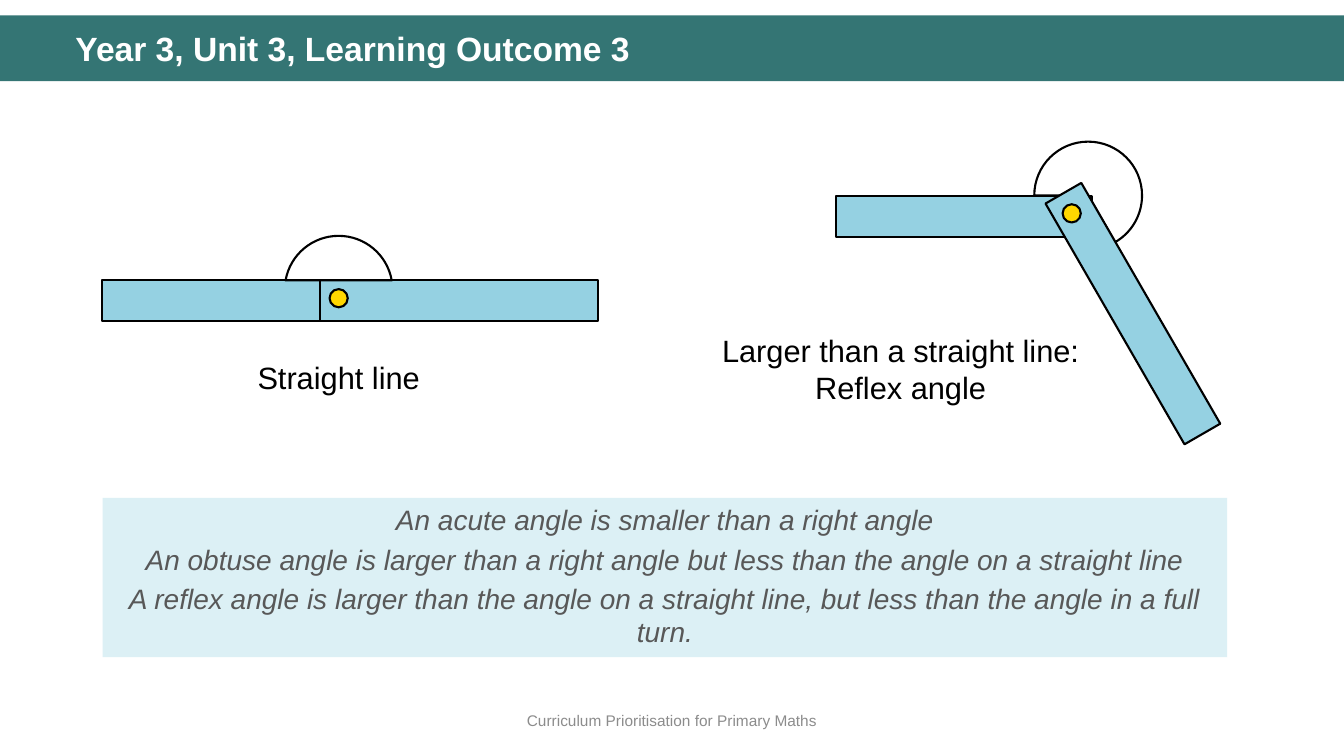
"""Build a slide comparing a straight line with a reflex angle."""
import math
from itertools import pairwise

from lxml import etree
from pptx import Presentation
from pptx import util as u
from pptx.dml.color import RGBColor
from pptx.enum import shapes, text
from pptx.oxml import ns

Pt = u.Pt
TEAL = RGBColor(0x34, 0x75, 0x74)
STRIP_BLUE = RGBColor(0x95, 0xD1, 0xE2)
PALE_BLUE = RGBColor(0xDC, 0xF0, 0xF5)
GOLD = RGBColor(0xFF, 0xD7, 0x00)
BLACK = RGBColor(0, 0, 0)
WHITE = RGBColor(0xFF, 0xFF, 0xFF)
DARK_GREY = RGBColor(0x58, 0x58, 0x58)
FOOTER_GREY = RGBColor(0x8C, 0x8C, 0x8C)

STRIP_WIDTH = 29.5
SHORT_STRIP = 182.6
LONG_STRIP = 198.6
PIN_SIZE = 13
ARC_RADIUS = 38.5


def style(shape, fill=None, outlined=True):
    """Set the fill and outline of a shape and remove its shadow."""
    shape.shadow.inherit = False
    if fill is None:
        shape.fill.background()
    else:
        shape.fill.solid()
        shape.fill.fore_color.rgb = fill
    if outlined:
        shape.line.color.rgb = BLACK
        shape.line.width = Pt(1.5)
    else:
        shape.line.fill.background()


def add_panel(slide, left, top, width, height, fill):
    """Add a filled rectangle without an outline."""
    panel = slide.shapes.add_shape(
        shapes.MSO_SHAPE.RECTANGLE, Pt(left), Pt(top), Pt(width), Pt(height))
    style(panel, fill, outlined=False)
    return panel


def write(shape, lines, size, color, bold=False, italic=False, gap=0,
          spacing=1.0, align=text.PP_ALIGN.CENTER, anchor=text.MSO_ANCHOR.TOP):
    """Write one paragraph per line into a shape."""
    frame = shape.text_frame
    frame.word_wrap = True
    frame.vertical_anchor = anchor
    for index, line in enumerate(lines):
        paragraph = frame.add_paragraph() if index else frame.paragraphs[0]
        paragraph.alignment = align
        paragraph.line_spacing = spacing
        if index:
            paragraph.space_before = Pt(gap)
        run = paragraph.add_run()
        run.text = line
        run.font.name = "Arial"
        run.font.size = Pt(size)
        run.font.bold = bold
        run.font.italic = italic
        run.font.color.rgb = color


def add_label(slide, left, top, width, height, lines, size, color, **options):
    """Add a text box holding the given lines."""
    box = slide.shapes.add_textbox(Pt(left), Pt(top), Pt(width), Pt(height))
    write(box, lines, size, color, **options)


def add_centred(group, kind, centre, width, height, rotation, fill):
    """Add an outlined shape around a centre point."""
    x, y = centre
    shape = group.shapes.add_shape(
        kind, Pt(x - width / 2), Pt(y - height / 2), Pt(width), Pt(height))
    shape.rotation = rotation
    style(shape, fill)


def add_hinged_strips(slide, strips, pin):
    """Add a group of strips joined by a round pin."""
    group = slide.shapes.add_group_shape()
    for centre, length, rotation in strips:
        add_centred(group, shapes.MSO_SHAPE.RECTANGLE, centre,
                    STRIP_WIDTH, length, rotation, STRIP_BLUE)
    add_centred(group, shapes.MSO_SHAPE.OVAL, pin, PIN_SIZE, PIN_SIZE, 0, GOLD)


def arc_point(centre, angle, tangent=0):
    """Return a point on the arc, shifted along its tangent."""
    x, y = centre
    turn = math.radians(angle)
    return (Pt(x + ARC_RADIUS * (math.cos(turn) - tangent * math.sin(turn))),
            Pt(y + ARC_RADIUS * (math.sin(turn) + tangent * math.cos(turn))))


def add_arc(slide, centre, angles, through_centre=False):
    """Add a closed arc with one Bezier curve between successive angles."""
    points = []
    for start, end in pairwise(angles):
        handle = 4 / 3 * math.tan(math.radians(end - start) / 4)
        points += [arc_point(centre, start, handle),
                   arc_point(centre, end, -handle), arc_point(centre, end)]
    curve_points = len(points)
    if through_centre:
        points.append((Pt(centre[0]), Pt(centre[1])))
    builder = slide.shapes.build_freeform(*arc_point(centre, angles[0]))
    builder.add_line_segments(points, close=True)
    arc = builder.convert_to_shape()
    segments = list(arc.element.iter(ns.qn("a:lnTo")))[:curve_points]
    for index in range(0, curve_points, 3):
        curve = etree.Element(ns.qn("a:cubicBezTo"))
        segments[index].addprevious(curve)
        for segment in segments[index:index + 3]:
            curve.append(segment[0])
            segment.getparent().remove(segment)
    style(arc)


def main():
    """Build and save the slide."""
    presentation = Presentation()
    presentation.slide_width, presentation.slide_height = Pt(960), Pt(540)
    slide = presentation.slides.add_slide(presentation.slide_layouts[6])

    add_panel(slide, 0, 11, 960, 47, TEAL)
    add_arc(slide, (777.3, 139.7), (180, 270, 360, 420), through_centre=True)
    add_label(slide, 46.8, 19.4, 877, 33.8,
              ["Year 3, Unit 3, Learning Outcome 3"], 24, WHITE, bold=True,
              spacing=0.9, align=text.PP_ALIGN.LEFT)
    add_label(slide, 0, 500.4, 960, 28.8,
              ["Curriculum Prioritisation for Primary Maths"], 11, FOOTER_GREY,
              anchor=text.MSO_ANCHOR.MIDDLE)

    add_hinged_strips(slide, [((164.5, 214.8), SHORT_STRIP, 270),
                              ((327.8, 214.6), LONG_STRIP, 90)], (241.9, 213))
    add_hinged_strips(slide, [((688.4, 154.7), SHORT_STRIP, 270),
                              ((809.2, 224), LONG_STRIP, 150)], (765.5, 152.4))
    add_label(slide, 125.3, 252.7, 233.3, 33.8, ["Straight line"], 22, BLACK)
    add_label(slide, 434.9, 233.3, 416.9, 60.5,
              ["Larger than a straight line:", "Reflex angle"], 22, BLACK)

    summary = add_panel(slide, 73.3, 355.6, 803.3, 113.8, PALE_BLUE)
    write(summary, [
        "An acute angle is smaller than a right angle",
        "An obtuse angle is larger than a right angle but less than the "
        "angle on a straight line",
        "A reflex angle is larger than the angle on a straight line, but "
        "less than the angle in a full turn.",
    ], 20, DARK_GREY, italic=True, gap=4)
    add_arc(slide, (241.9, 207), (190, 270, 350))

    presentation.save("out.pptx")


if __name__ == "__main__":
    main()
